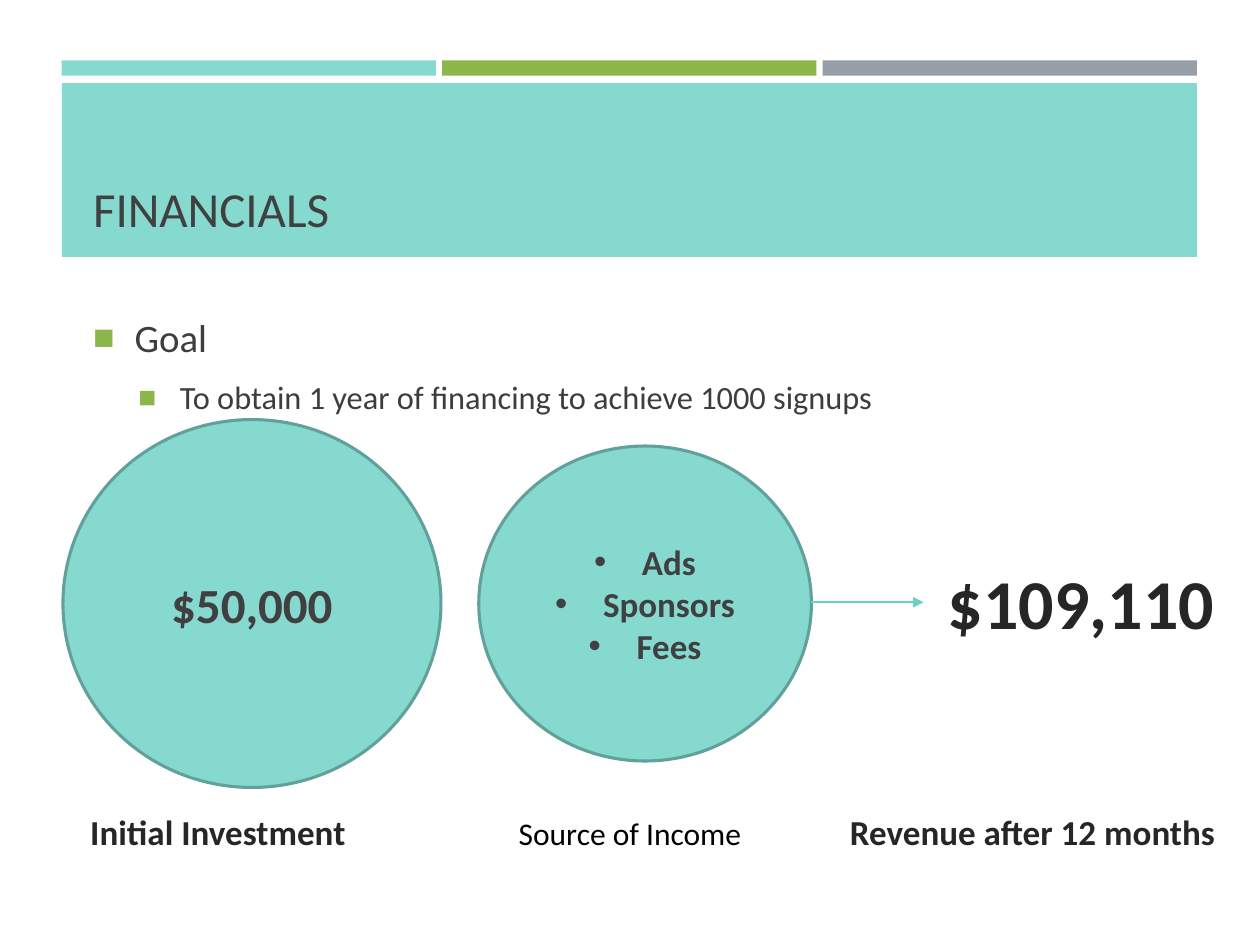
from lxml.etree import SubElement
from pptx import Presentation
from pptx.dml.color import RGBColor
from pptx.enum.shapes import MSO_CONNECTOR, MSO_SHAPE
from pptx.enum.text import MSO_ANCHOR, PP_ALIGN
from pptx.oxml.ns import qn
from pptx.util import Inches, Pt

COLORS = {
    "teal": "85D9CF",
    "green": "8CB64A",
    "gray": "969FA7",
    "outline": "62A199",
    "arrow": "6AD1C4",
    "title": "404040",
    "body": "3D3D3D",
    "strong": "262626",
    "black": "000000",
}


def rgb(name):
    """Return the named colour."""
    return RGBColor.from_string(COLORS[name])


def add_bullet(p, char, indent, hang, color=None, size=None):
    """Give a paragraph a hanging bullet."""
    pPr = p._p.get_or_add_pPr()
    pPr.set("marL", str(Inches(indent)))
    pPr.set("indent", str(-Inches(hang)))
    if color:
        SubElement(SubElement(pPr, qn("a:buClr")), qn("a:srgbClr"), val=COLORS[color])
    if size:
        SubElement(pPr, qn("a:buSzPct"), val=str(size * 1000))
    SubElement(pPr, qn("a:buFont"), typeface="Arial")
    SubElement(pPr, qn("a:buChar"), char=char)


def add_paragraph(tf, text, size=20, color="title", bold=False, align=PP_ALIGN.CENTER,
                  before=0, after=0, bullet=None):
    """Write one formatted paragraph, using the empty first one if it is free."""
    p = tf.paragraphs[0] if not tf.text else tf.add_paragraph()
    p.alignment = align
    p.space_before, p.space_after = Pt(before), Pt(after)
    if bullet:
        add_bullet(p, **bullet)
    r = p.add_run()
    r.text = text
    r.font.name = "Calibri"
    r.font.size = Pt(size)
    r.font.bold = bold
    r.font.color.rgb = rgb(color)
    return p


def add_box(s, x, y, w, h, anchor=MSO_ANCHOR.TOP, wrap=True):
    """Add a text box and return its text frame."""
    tf = s.shapes.add_textbox(Inches(x), Inches(y), Inches(w), Inches(h)).text_frame
    tf.word_wrap = wrap
    tf.vertical_anchor = anchor
    return tf


def add_filled(s, kind, x, y, w, h, fill, line=None):
    """Add a flat filled shape and return its text frame."""
    sp = s.shapes.add_shape(kind, Inches(x), Inches(y), Inches(w), Inches(h))
    sp.shadow.inherit = False
    sp.fill.solid()
    sp.fill.fore_color.rgb = rgb(fill)
    if line:
        sp.line.color.rgb = rgb(line)
        sp.line.width = Pt(1.75)
    else:
        sp.line.fill.background()
    sp.text_frame.vertical_anchor = MSO_ANCHOR.MIDDLE
    return sp.text_frame


def add_arrow(s, x1, x2, y):
    """Add a horizontal arrow."""
    c = s.shapes.add_connector(MSO_CONNECTOR.STRAIGHT, Inches(x1), Inches(y), Inches(x2), Inches(y))
    c.line.color.rgb = rgb("arrow")
    c.line.width = Pt(1)
    SubElement(c.line._get_or_add_ln(), qn("a:tailEnd"), type="triangle")
    SubElement(c._element.spPr, qn("a:effectLst"))


def add_header(s):
    """Add the three bars and the title band."""
    for i, color in enumerate(("teal", "green", "gray")):
        add_filled(s, MSO_SHAPE.RECTANGLE, 0.49 + 3.02 * i, 0.48, 2.97, 0.12, color)
    add_filled(s, MSO_SHAPE.RECTANGLE, 0.49, 0.66, 9.01, 1.38, "teal")
    tf = add_box(s, 0.64, 0.75, 8.74, 1.18, MSO_ANCHOR.BOTTOM)
    add_paragraph(tf, "FINANCIALS", size=28, align=PP_ALIGN.LEFT)


def add_goal(s):
    """Add the goal and its detail."""
    tf = add_box(s, 0.64, 2.44, 8.74, 0.9)
    lines = (("Goal", 22.2, 0, 0.33),
             ("To obtain 1 year of financing to achieve 1000 signups", 18.5, 3.7, 0.69))
    for level, (text, size, before, indent) in enumerate(lines):
        bullet = dict(char="■", indent=indent, hang=0.33, color="green", size=92)
        p = add_paragraph(tf, text, size=size, color="body", align=PP_ALIGN.LEFT,
                          before=before, after=6, bullet=bullet)
        p.level = level


def add_flow(s):
    """Add the circles, the arrow and the revenue figure."""
    tf = add_filled(s, MSO_SHAPE.OVAL, 0.5, 3.33, 3, 2.92, "teal", "outline")
    add_paragraph(tf, "$50,000", size=28, bold=True)
    tf = add_filled(s, MSO_SHAPE.OVAL, 3.8, 3.54, 2.64, 2.5, "teal", "outline")
    for source in ("Ads", "Sponsors", "Fees"):
        add_paragraph(tf, source, bold=True, bullet=dict(char="•", indent=0.38, hang=0.38))
    add_arrow(s, 6.44, 7.33, 4.78)
    tf = add_box(s, 7.33, 4.39, 2.5, 0.77)
    add_paragraph(tf, "$109,110", size=40, color="strong", bold=True)


def add_captions(s):
    """Add the caption below each stage."""
    captions = (("Initial Investment", 0.48, 6.38, 2.5, 0.44, 20, "strong", True),
                ("Source of Income", 4, 6.41, 2, 0.4, 18, "black", False),
                ("Revenue after 12 months", 6.46, 6.38, 3.47, 0.44, 20, "strong", True))
    for text, x, y, w, h, size, color, bold in captions:
        tf = add_box(s, x, y, w, h, wrap=False)
        add_paragraph(tf, text, size=size, color=color, bold=bold)


def main():
    """Build and save the slide."""
    prs = Presentation()
    prs.slide_width, prs.slide_height = Inches(10), Inches(7.5)
    s = prs.slides.add_slide(prs.slide_layouts[6])
    add_header(s)
    add_goal(s)
    add_flow(s)
    add_captions(s)
    prs.save("out.pptx")


if __name__ == "__main__":
    main()
